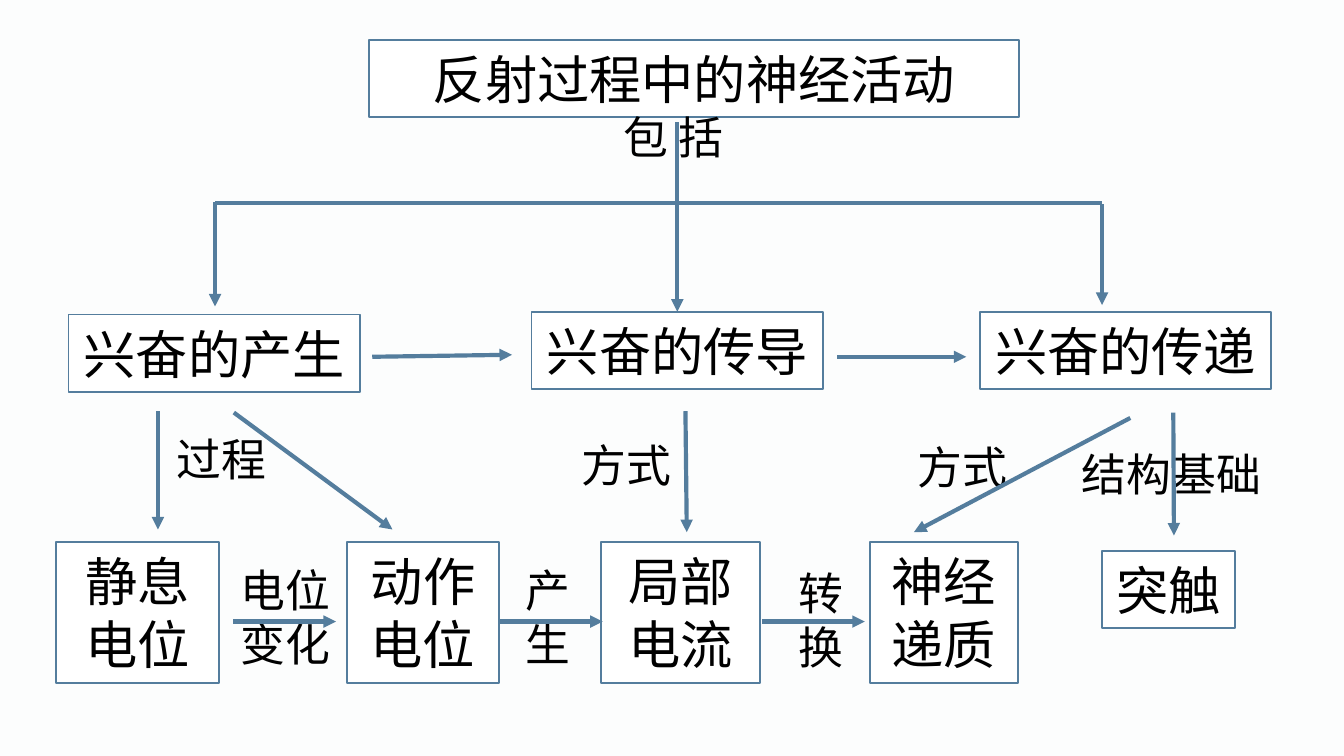
from lxml.etree import SubElement
from pptx import Presentation
from pptx.dml.color import RGBColor
from pptx.enum.shapes import MSO_CONNECTOR, MSO_SHAPE
from pptx.enum.text import MSO_AUTO_SIZE, PP_ALIGN
from pptx.oxml.ns import qn
from pptx.util import Pt

PX = 4572  # 200 px to the inch
BLUE = "547D9D"


def px(length):
    return length * PX


def color(hex_string):
    return RGBColor.from_string(hex_string)


def write(shape, text, size, font, align, wrap):
    frame = shape.text_frame
    frame.word_wrap = wrap
    frame.auto_size = MSO_AUTO_SIZE.SHAPE_TO_FIT_TEXT
    para = frame.paragraphs[0]
    para.text = text
    para.alignment = align
    para.font.size = Pt(size)
    para.font.name = font
    para.font.color.rgb = color("000000")


def add_node(page, text, left, top, width, height=115, wrap=False):
    node = page.shapes.add_shape(
        MSO_SHAPE.RECTANGLE, px(left), px(top), px(width), px(height))
    node.shadow.inherit = False
    node.fill.solid()
    node.fill.fore_color.rgb = color("FFFFFF")
    node.line.color.rgb = color(BLUE)
    node.line.width = Pt(1)
    write(node, text, 28, "Arial", PP_ALIGN.CENTER, wrap)


def add_label(page, text, left, top, width, height=100, wrap=False):
    label = page.shapes.add_textbox(px(left), px(top), px(width), px(height))
    write(label, text, 24, "Noto Sans CJK SC", PP_ALIGN.LEFT, wrap)


def add_line(page, x1, y1, x2, y2, arrow=True):
    line = page.shapes.add_connector(
        MSO_CONNECTOR.STRAIGHT, px(x1), px(y1), px(x2), px(y2))
    line.line.color.rgb = color(BLUE)
    line.line.width = Pt(2.25)
    properties = line._element.spPr
    if arrow:
        SubElement(properties.find(qn("a:ln")), qn("a:tailEnd"), type="triangle")
    SubElement(properties, qn("a:effectLst"))


def add_overview(page, left, top):
    """Heading with the trunk that branches to the three stages."""
    add_node(page, "反射过程中的神经活动", left + 229, top, 967, wrap=True)
    add_label(page, "包 括", left + 588, top + 95, 208)
    add_line(page, left, top + 243, left + 1320, top + 243, arrow=False)
    for x, start, end in ((0, 241, 397), (688, 123, 405), (1320, 245, 395)):
        add_line(page, left + x, top + start, left + x, top + end)


def add_stages(page, left, top):
    stages = (("兴奋的产生", 0, 4), ("兴奋的传导", 689, 0), ("兴奋的传递", 1356, 0))
    for text, x, y in stages:
        add_node(page, text, left + x, top + y, 434)
    for x1, y1, x2, y2 in ((452, 67, 660, 64), (1144, 67, 1336, 67)):
        add_line(page, left + x1, top + y1, left + x2, top + y2)


def add_relations(page, left, top):
    """Labelled arrows leading from the stages down to their details."""
    labels = (("过程", 9, 21, 176), ("方式", 612, 30, 176),
              ("方式", 1112, 33, 176), ("结构基础", 1356, 43, 310))
    for text, x, y, width in labels:
        add_label(page, text, left + x, top + y, width)
    arrows = ((1, 0, 1, 176), (114, 2, 350, 176), (786, 0, 788, 180),
              (1448, 10, 1126, 180), (1512, 2, 1513, 185))
    for x1, y1, x2, y2 in arrows:
        add_line(page, left + x1, top + y1, left + x2, top + y2)


def add_details(page, left, top):
    nodes = (("静息电位", 0, 243), ("动作电位", 433, 227),
             ("局部电流", 811, 237), ("神经递质", 1211, 221))
    for text, x, width in nodes:
        add_node(page, text, left + x, top, width, 209, wrap=True)
    add_node(page, "突触", left + 1557, top + 13, 198)
    steps = (("电位变化", 255, 21, 178, 264), ("产生", 679, 21, 96, 661),
             ("转换", 1085, 25, 96, 1051))
    for text, x, y, width, start in steps:
        add_label(page, text, left + x, top + y, width, 182, wrap=True)
        add_line(page, left + start, top + 118, left + start + 153, top + 118)


def main():
    deck = Presentation()
    deck.slide_width, deck.slide_height = px(2000), px(1125)
    page = deck.slides.add_slide(deck.slide_layouts[6])
    page.background.fill.solid()
    page.background.fill.fore_color.rgb = color("FCFDFD")
    add_overview(page, 320, 59)
    add_stages(page, 102, 464)
    add_relations(page, 234, 612)
    add_details(page, 83, 807)
    deck.save("out.pptx")


if __name__ == "__main__":
    main()
